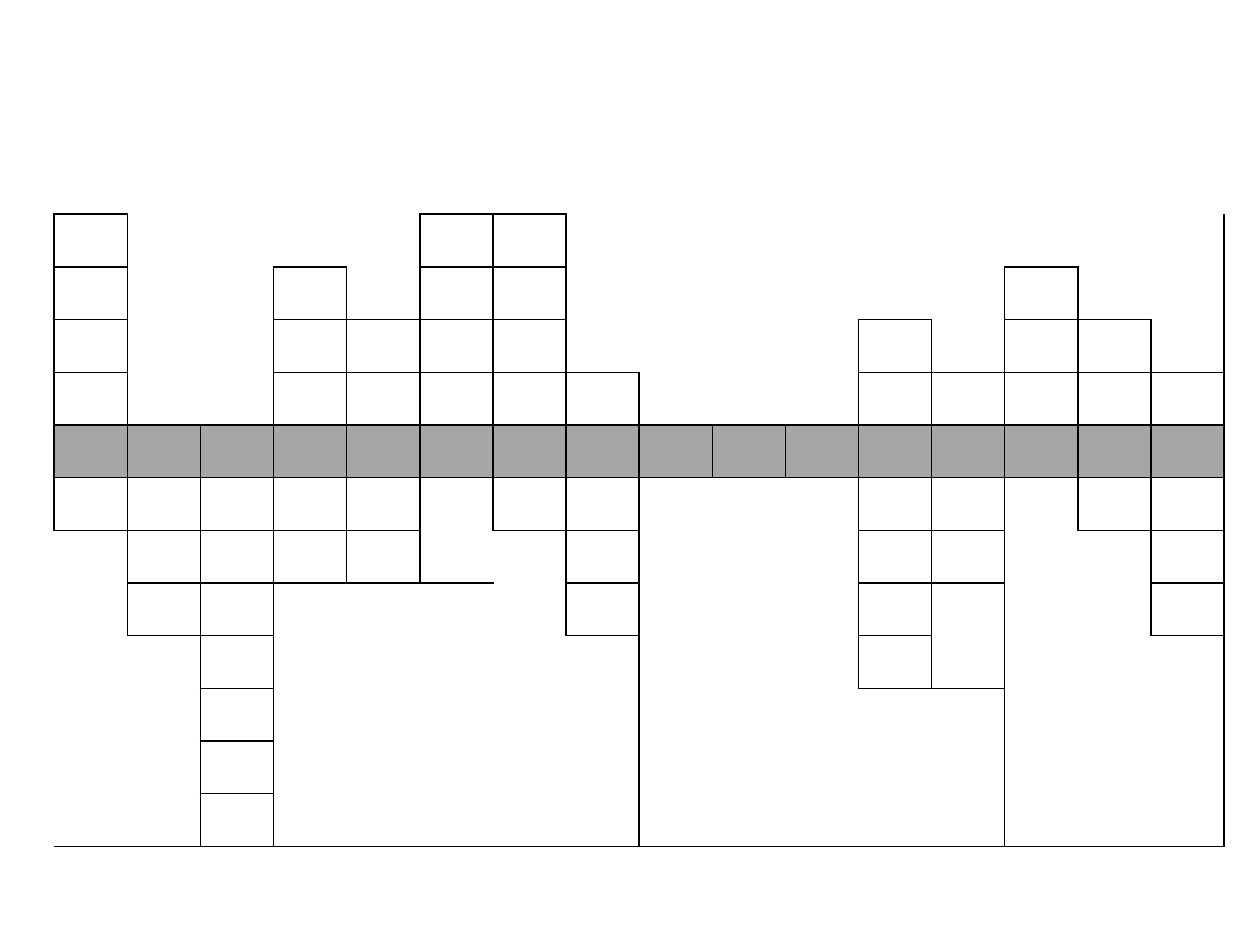
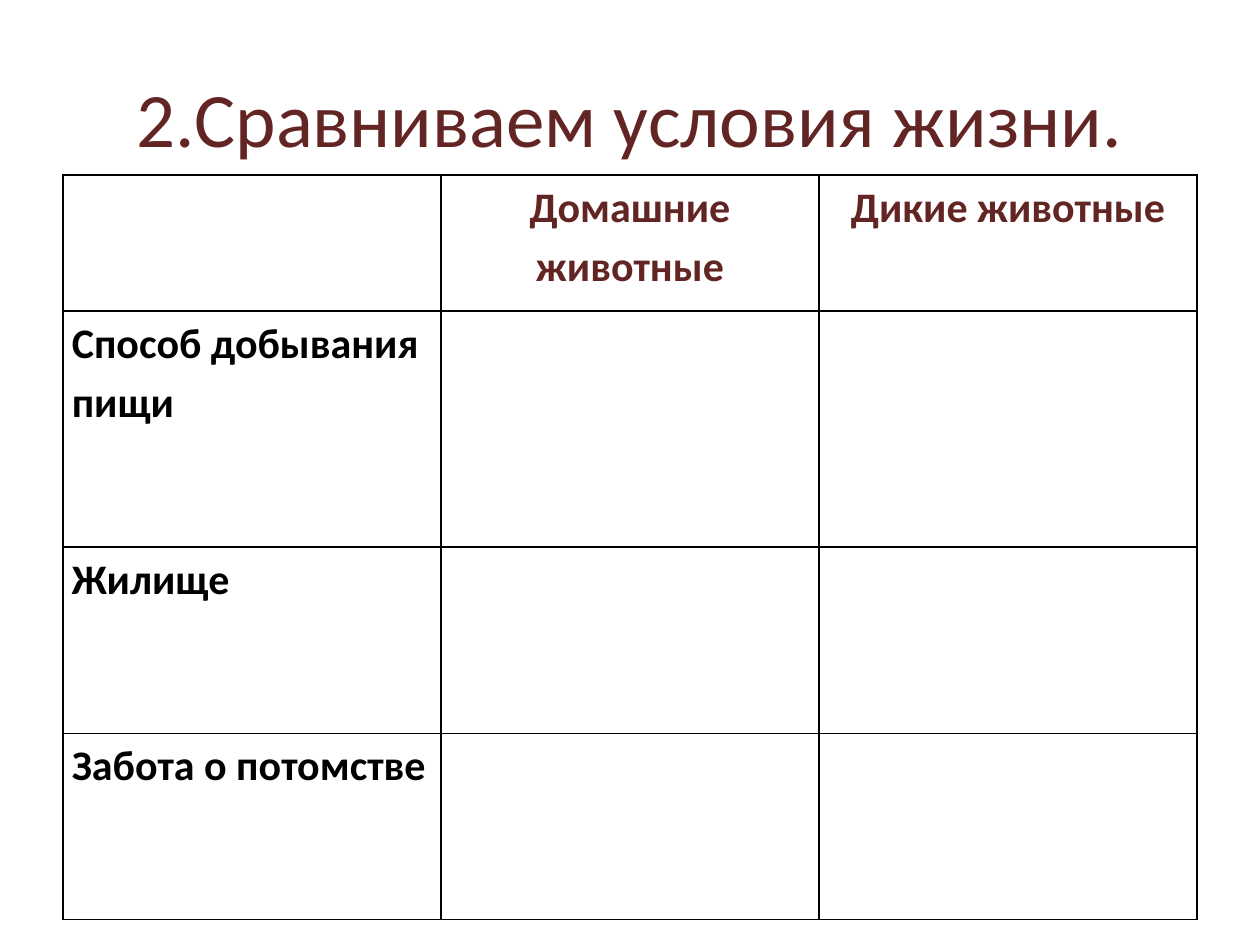
from dataclasses import dataclass

from lxml import etree
from pptx import Presentation, util as u
from pptx.dml.color import RGBColor
from pptx.enum import text
from pptx.oxml.ns import qn


@dataclass(frozen=True)
class Theme:
    font: str = "Calibri"
    ink: str = "000000"
    accent: str = "632523"
    paper: str = "FFFFFF"
    key_row: str = "A6A6A6"
    title_size: int = 44
    table_size: int = 24
    line_width: int = 1
    table_spacing: float = 1.15
    plain_table: str = "{2D5ABB26-0587-4C30-8999-92F81FD0307C}"


GRID_COLUMNS, GRID_ROWS = 100, 75
ALL_SIDES = "lrtb"

CROSSWORD_COLUMNS, CROSSWORD_ROWS, KEYWORD_ROW = 16, 12, 4
# Empty areas of the crossword: row, column, rows, columns, ruled sides
CROSSWORD_GAPS = [
    (0, 1, 4, 2, "lb"), (0, 3, 1, 2, "r"), (0, 7, 3, 4, "l"),
    (0, 11, 2, 2, ""), (0, 13, 1, 3, "r"), (1, 4, 1, 1, "lrb"),
    (1, 14, 1, 2, "lr"), (2, 12, 1, 1, "lrb"), (2, 15, 1, 1, "lrb"),
    (3, 8, 1, 3, "lrb"), (5, 5, 2, 1, "lt"), (5, 8, 7, 3, "ltb"),
    (5, 13, 7, 1, "ltb"), (6, 0, 6, 1, "tb"), (6, 6, 6, 1, "tb"),
    (6, 14, 6, 1, "tb"), (7, 3, 5, 3, "ltb"), (7, 12, 2, 1, "lt"),
    (8, 1, 4, 1, "tb"), (8, 7, 4, 1, "tb"), (8, 15, 4, 1, "trb"),
    (9, 11, 3, 2, "tb"),
]

ANIMAL_GROUPS = ["Домашние животные", "Дикие животные"]
LIVING_CONDITIONS = ["Способ добывания пищи", "Жилище", "Забота о потомстве"]
CONDITION_HEIGHTS = [10.8, 18.7, 14.8, 14.8]


def write(frame, words, *, font, size, color, bold=False,
          align=text.PP_ALIGN.LEFT, spacing=1.0):
    para = frame.paragraphs[0]
    para.alignment = align
    para.line_spacing = spacing
    span = para.add_run()
    span.text = words
    span.font.name = font
    span.font.size = u.Pt(size)
    span.font.bold = bold
    span.font.color.rgb = RGBColor.from_string(color)


class Board:
    """Holds the theme and the slide being filled; lengths are grid units."""

    def __init__(self, deck, theme):
        self.deck, self.theme = deck, theme
        self.page = None

    def new_page(self):
        self.page = self.deck.slides.add_slide(self.deck.slide_layouts[6])
        fill = self.page.background.fill
        fill.solid()
        fill.fore_color.rgb = RGBColor.from_string(self.theme.paper)

    def across(self, columns):
        return round(self.deck.slide_width * columns / GRID_COLUMNS)

    def down(self, rows):
        return round(self.deck.slide_height * rows / GRID_ROWS)

    def title(self, words):
        box = self.page.shapes.add_textbox(
            self.across(5), self.down(3), self.across(90), self.down(12.5))
        frame = box.text_frame
        frame.word_wrap = True
        frame.vertical_anchor = text.MSO_ANCHOR.MIDDLE
        write(frame, words, font=self.theme.font, size=self.theme.title_size,
              color=self.theme.accent, align=text.PP_ALIGN.CENTER)

    def table(self, left, top, widths, heights):
        """Add an unstyled table with every cell ruled on all sides."""
        holder = self.page.shapes.add_table(
            len(heights), len(widths), self.across(left), self.down(top),
            self.across(sum(widths)), self.down(sum(heights)))
        for style in holder.element.iter(qn("a:tableStyleId")):
            style.text = self.theme.plain_table
        table = holder.table
        table.first_row = table.horz_banding = False
        for column, width in zip(table.columns, widths):
            column.width = self.across(width)
        for row, height in zip(table.rows, heights):
            row.height = self.down(height)
        for cell in table.iter_cells():
            cell.margin_left = cell.margin_right = u.Inches(0.07)
            cell.margin_top = cell.margin_bottom = 0
            self.paint(cell, self.theme.paper)
            self.rule(cell, ALL_SIDES)
        return table

    def paint(self, cell, color):
        cell.fill.solid()
        cell.fill.fore_color.rgb = RGBColor.from_string(color)

    def rule(self, cell, sides):
        """Draw the named sides of a cell and clear the others."""
        properties = cell._tc.get_or_add_tcPr()
        for place, side in enumerate(ALL_SIDES):
            tag = qn(f"a:ln{side.upper()}")
            for old in properties.findall(tag):
                properties.remove(old)
            line = etree.Element(tag, w=str(u.Pt(self.theme.line_width)))
            if side in sides:
                fill = etree.SubElement(line, qn("a:solidFill"))
                etree.SubElement(fill, qn("a:srgbClr"), val=self.theme.ink)
            else:
                etree.SubElement(line, qn("a:noFill"))
            properties.insert(place, line)

    def merge(self, table, row, column, rows, columns, sides):
        for r in range(row, row + rows):
            for c in range(column, column + columns):
                self.rule(table.cell(r, c), sides)
        if rows * columns > 1:
            table.cell(row, column).merge(
                table.cell(row + rows - 1, column + columns - 1))

    def label(self, cell, words, color, align=text.PP_ALIGN.LEFT):
        write(cell.text_frame, words, font=self.theme.font,
              size=self.theme.table_size, color=color, bold=True,
              align=align, spacing=self.theme.table_spacing)


def crossword_page(board):
    board.new_page()
    table = board.table(
        4.3, 17, [92.9 / CROSSWORD_COLUMNS] * CROSSWORD_COLUMNS,
        [50.2 / CROSSWORD_ROWS] * CROSSWORD_ROWS)
    for column in range(CROSSWORD_COLUMNS):
        board.paint(table.cell(KEYWORD_ROW, column), board.theme.key_row)
    for gap in CROSSWORD_GAPS:
        board.merge(table, *gap)


def comparison_page(board):
    board.new_page()
    board.title("2.Сравниваем условия жизни.")
    table = board.table(5, 13.9, [30] * 3, CONDITION_HEIGHTS)
    for column, group in enumerate(ANIMAL_GROUPS, 1):
        board.label(table.cell(0, column), group, board.theme.accent,
                    text.PP_ALIGN.CENTER)
    for row, condition in enumerate(LIVING_CONDITIONS, 1):
        board.label(table.cell(row, 0), condition, board.theme.ink)


def main():
    deck = Presentation()
    deck.slide_width, deck.slide_height = u.Inches(10), u.Inches(7.5)
    board = Board(deck, Theme())
    crossword_page(board)
    comparison_page(board)
    deck.save("out.pptx")


if __name__ == "__main__":
    main()
